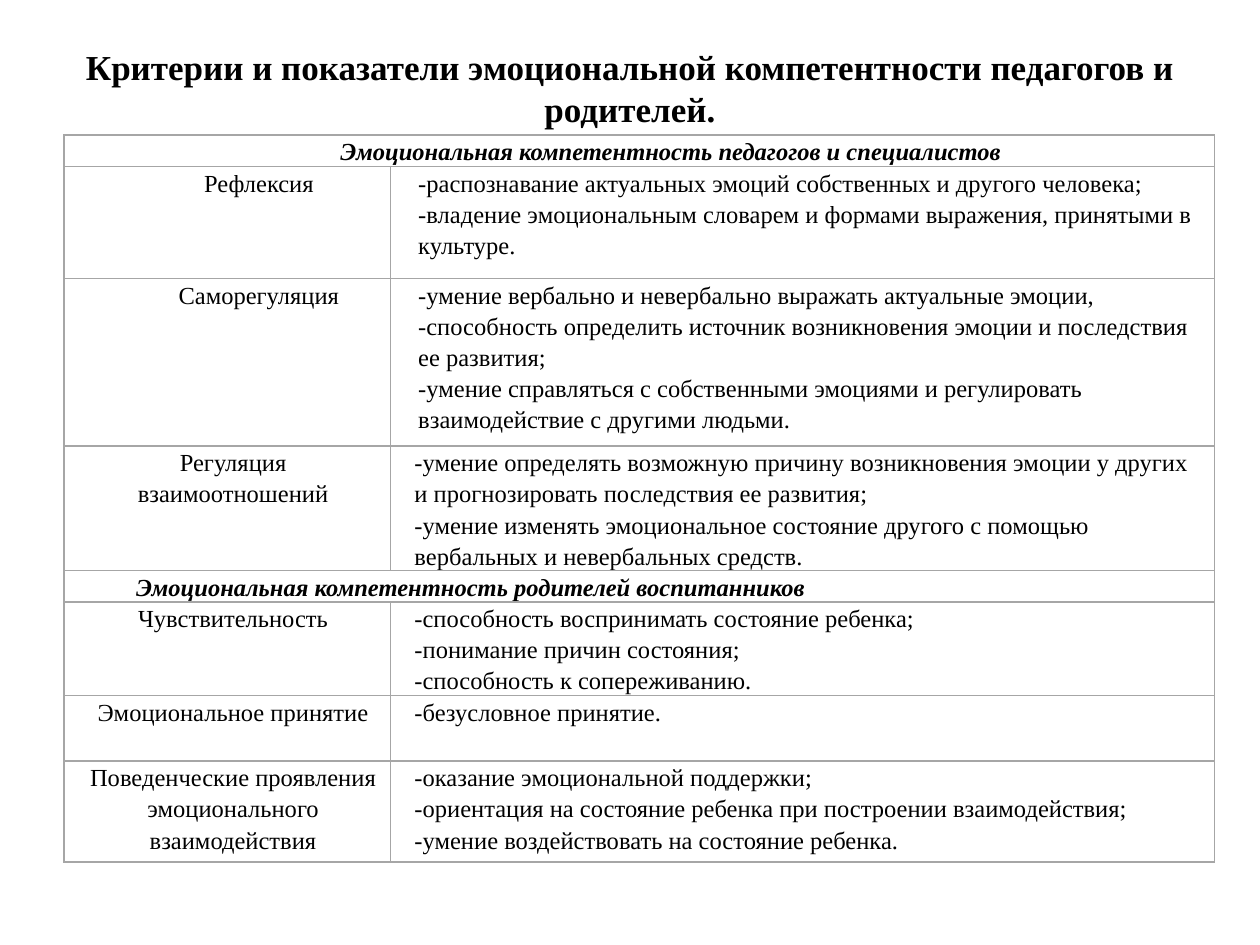
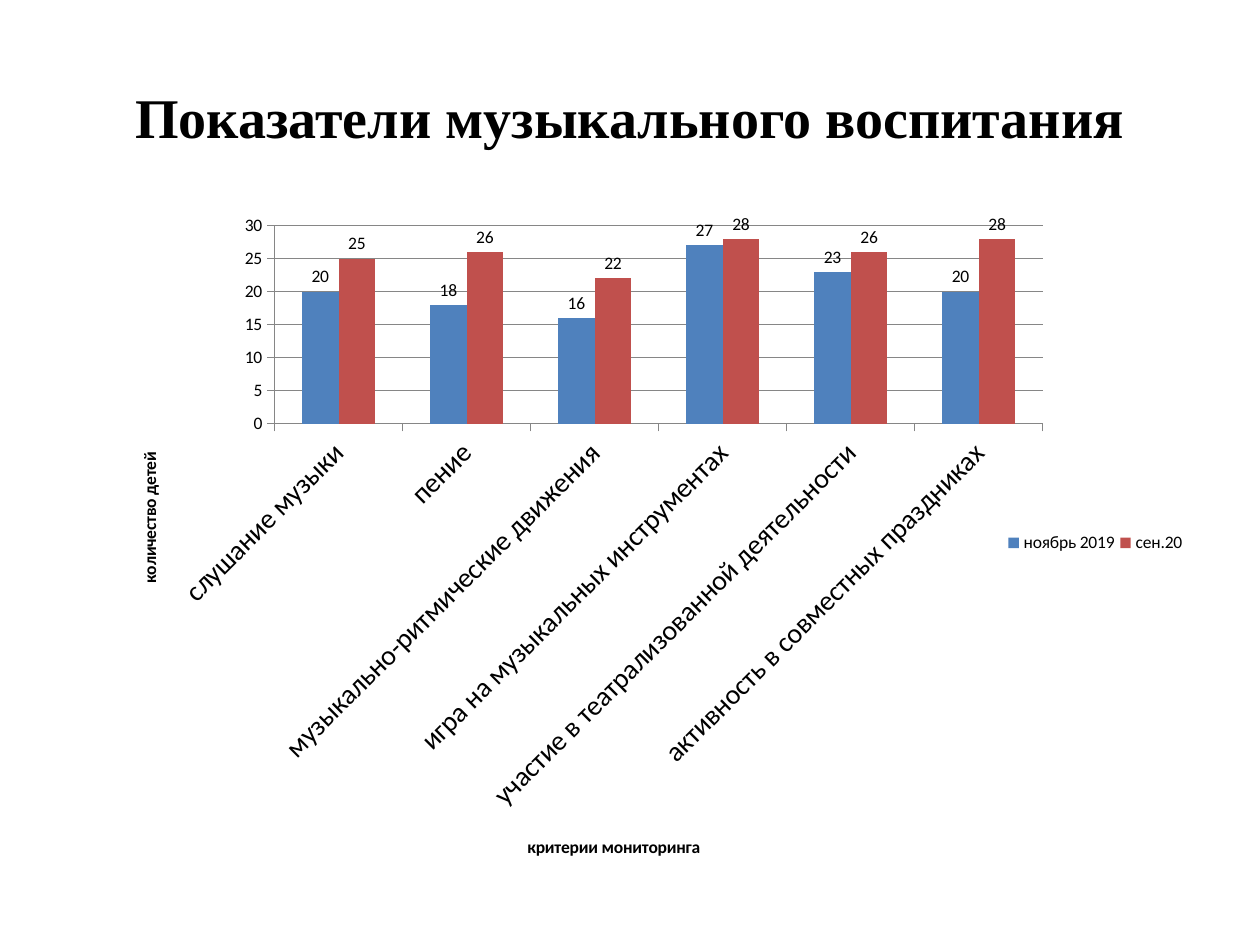
from dataclasses import dataclass
from typing import Any, NamedTuple

from pptx import Presentation
from pptx.chart.data import CategoryChartData
from pptx.dml.color import RGBColor
from pptx.enum.chart import XL_CHART_TYPE, XL_LABEL_POSITION, XL_LEGEND_POSITION, XL_TICK_MARK
from pptx.enum.text import MSO_ANCHOR, PP_ALIGN
from pptx.oxml import parse_xml
from pptx.oxml.ns import nsdecls, qn
from pptx.util import Inches, Pt

# Shared look
WIDE, HIGH = Inches(10), Inches(7.5)
BLACK = RGBColor(0x00, 0x00, 0x00)
RULE = RGBColor(0xA6, 0xA6, 0xA6)
GRID = RGBColor(0x86, 0x86, 0x86)
BLUE = RGBColor(0x4F, 0x81, 0xBD)
RED = RGBColor(0xC0, 0x50, 0x4D)
SERIF, SANS = "Times New Roman", "Calibri"
TITLE_ONLY = 5


class Box(NamedTuple):
    """Left, top, width and height in percent of the area around it."""
    left: float
    top: float
    width: float
    height: float


@dataclass
class Trait:
    """One table row: a label with its signs, or a heading across both columns."""
    label: str
    high: float
    signs: str = ""
    inset: float = 0.09
    sign_inset: float = 0.12
    align: Any = PP_ALIGN.CENTER


@dataclass
class Series:
    name: str
    values: tuple[int, ...]
    color: RGBColor


TABLE_BOX = Box(5.1, 14.27, 91.3, 77)
COLUMNS = (25.9, 65.4)
TRAITS = [
    Trait("Эмоциональная компетентность педагогов и специалистов", 3.33, inset=0.5),
    Trait("Рефлексия", 11.87,
          "-распознавание актуальных эмоций собственных и другого человека;\n"
          "-владение эмоциональным словарем и формами выражения, принятыми в культуре.",
          0.5, 0.15),
    Trait("Саморегуляция", 17.73,
          "-умение вербально и невербально выражать актуальные эмоции,\n"
          "-способность определить источник возникновения эмоции и последствия ее развития;\n"
          "-умение справляться с собственными эмоциями и регулировать "
          "взаимодействие с другими людьми.",
          0.5, 0.15),
    Trait("Регуляция взаимоотношений", 13.1,
          "-умение определять возможную причину возникновения эмоции у других "
          "и прогнозировать последствия ее развития;\n"
          "-умение изменять эмоциональное состояние другого с помощью "
          "вербальных и невербальных средств."),
    Trait("Эмоциональная компетентность родителей воспитанников", 3.33,
          inset=0.5, align=PP_ALIGN.LEFT),
    Trait("Чувствительность", 9.9,
          "-способность воспринимать состояние ребенка;\n"
          "-понимание причин состояния;\n"
          "-способность к сопереживанию."),
    Trait("Эмоциональное принятие", 6.95, "-безусловное принятие."),
    Trait("Поведенческие проявления эмоционального взаимодействия", 10.67,
          "-оказание эмоциональной поддержки;\n"
          "-ориентация на состояние ребенка при построении взаимодействия;\n"
          "-умение воздействовать на состояние ребенка."),
]

CHART_BOX = Box(8.3, 21.6, 86.5, 71.33)
PLOT_BOX = Box(15.6, 3.2, 70.5, 29.4)
KEY_BOX = Box(82.4, 48, 17, 4.5)
SKILLS = (
    "слушание музыки", "пение", "музыкально-ритмические движения",
    "игра на музыкальных инструментах", "участие в театрализованной деятельности",
    "активность в совместных праздниках",
)
SERIES = [
    Series("ноябрь 2019", (20, 18, 16, 27, 23, 20), BLUE),
    Series("сен.20", (25, 26, 22, 28, 26, 28), RED),
]


def place(box: Box) -> tuple[int, int, int, int]:
    return tuple(int(part * side / 100) for part, side in zip(box, (WIDE, HIGH) * 2))


def style(font: Any, face: str, size: float, bold: bool = False, italic: bool = False) -> None:
    font.name, font.size = face, Pt(size)
    font.bold, font.italic = bold, italic
    font.color.rgb = BLACK


def add_slide(deck: Any, text: str, size: float, box: Box) -> Any:
    """Add a slide with its title moved and formatted."""
    slide = deck.slides.add_slide(deck.slide_layouts[TITLE_ONLY])
    title = slide.shapes.title
    title.left, title.top, title.width, title.height = place(box)
    frame = title.text_frame
    frame.text = text
    frame.vertical_anchor = MSO_ANCHOR.MIDDLE
    line = frame.paragraphs[0]
    line.alignment = PP_ALIGN.CENTER
    style(line.runs[0].font, SERIF, size, bold=True)
    return slide


# Table
def rule_cell(cell: Any) -> None:
    cell.fill.background()
    props = cell._tc.get_or_add_tcPr()
    for spot, side in enumerate("LRTB"):
        props.insert(spot, parse_xml(
            f'<a:ln{side} {nsdecls("a")} w="{Pt(1)}"><a:solidFill>'
            f'<a:srgbClr val="{RULE}"/></a:solidFill></a:ln{side}>'))


def fill_cell(cell: Any, text: str, inset: float, align: Any, head: bool) -> None:
    cell.margin_left = cell.margin_right = Inches(0.07)
    cell.margin_top = cell.margin_bottom = 0
    cell.text_frame.text = text
    for line in cell.text_frame.paragraphs:
        line.alignment, line.line_spacing = align, 1.15
        line._p.get_or_add_pPr().set("marL", str(Inches(inset)))
        style(line.runs[0].font, SERIF, 14, head, head)


def add_traits(slide: Any) -> None:
    table = slide.shapes.add_table(len(TRAITS), len(COLUMNS), *place(TABLE_BOX)).table
    table.first_row = table.horz_banding = False
    for column, share in zip(table.columns, COLUMNS):
        column.width = int(WIDE * share / 100)
    for spot, trait in enumerate(TRAITS):
        table.rows[spot].height = int(HIGH * trait.high / 100)
        label, signs = table.cell(spot, 0), table.cell(spot, 1)
        rule_cell(label)
        rule_cell(signs)
        fill_cell(label, trait.label, trait.inset, trait.align, not trait.signs)
        if trait.signs:
            fill_cell(signs, trait.signs, trait.sign_inset, PP_ALIGN.LEFT, False)
        else:
            label.merge(signs)


# Chart
def pin(part: Any, box: Box, inner: bool = False, sized: bool = True) -> None:
    """Fix a chart part at a share of the chart area."""
    old = part.find(qn("c:layout"))
    if old is not None:
        part.remove(old)
    rows = [("layoutTarget", "inner")] if inner else []
    rows += [("xMode", "edge"), ("yMode", "edge")]
    rows += list(zip("xywh" if sized else "xy", (share / 100 for share in box)))
    body = "".join(f'<c:{name} val="{value}"/>' for name, value in rows)
    layout = parse_xml(f'<c:layout {nsdecls("c")}><c:manualLayout>{body}'
                       '</c:manualLayout></c:layout>')
    after = part.find(qn("c:overlay"))
    if after is None:
        part.insert(0, layout)
    else:
        after.addprevious(layout)


def set_axis(axis: Any, text: str, size: float, spot: Box) -> None:
    style(axis.tick_labels.font, SANS, size)
    axis.major_tick_mark = XL_TICK_MARK.OUTSIDE
    axis.minor_tick_mark = XL_TICK_MARK.NONE
    axis.format.line.color.rgb = GRID
    title = axis.axis_title
    title.text_frame.text = text
    style(title.text_frame.paragraphs[0].runs[0].font, SANS, 10, bold=True)
    pin(title._element, spot, sized=False)


def add_skills(slide: Any) -> None:
    data = CategoryChartData()
    data.categories = SKILLS
    for item in SERIES:
        data.add_series(item.name, item.values)
    chart = slide.shapes.add_chart(
        XL_CHART_TYPE.COLUMN_CLUSTERED, *place(CHART_BOX), data).chart
    chart.has_title = False
    style(chart.font, SANS, 10)

    # Bars and their values
    plot = chart.plots[0]
    plot.gap_width, plot.overlap, plot.vary_by_categories = 150, 0, False
    for item, bars in zip(SERIES, plot.series):
        bars.format.fill.solid()
        bars.format.fill.fore_color.rgb = item.color
        labels = bars.data_labels
        labels.show_value = True
        labels.position = XL_LABEL_POSITION.OUTSIDE_END
        style(labels.font, SANS, 10)

    # Axes
    names, counts = chart.category_axis, chart.value_axis
    set_axis(names, "критерии мониторинга", 16, Box(38.5, 93.2, 0, 0))
    set_axis(counts, "количество детей", 10, Box(2.8, 36.3, 0, 0))
    names._element.find(qn("c:txPr")).find(qn("a:bodyPr")).set("rot", "-2700000")
    turn = counts.axis_title.text_frame._txBody.find(qn("a:bodyPr"))
    turn.set("rot", "-5400000")
    turn.set("vert", "horz")
    counts.minimum_scale, counts.maximum_scale, counts.major_unit = 0, 30, 5
    counts.has_major_gridlines = True
    counts.major_gridlines.format.line.color.rgb = GRID

    # Legend and plot area
    chart.has_legend = True
    key = chart.legend
    key.position, key.include_in_layout = XL_LEGEND_POSITION.RIGHT, False
    style(key.font, SANS, 10)
    pin(key._element, KEY_BOX)
    pin(chart._chartSpace.chart.plotArea, PLOT_BOX, inner=True)


def main() -> None:
    deck = Presentation()
    deck.slide_width, deck.slide_height = WIDE, HIGH
    add_traits(add_slide(
        deck, "Критерии и показатели эмоциональной компетентности педагогов и родителей.",
        20, Box(5, 0, 90, 18.53)))
    add_skills(add_slide(deck, "Показатели музыкального воспитания", 32, Box(5, 4, 90, 16.67)))
    deck.save("out.pptx")


if __name__ == "__main__":
    main()
